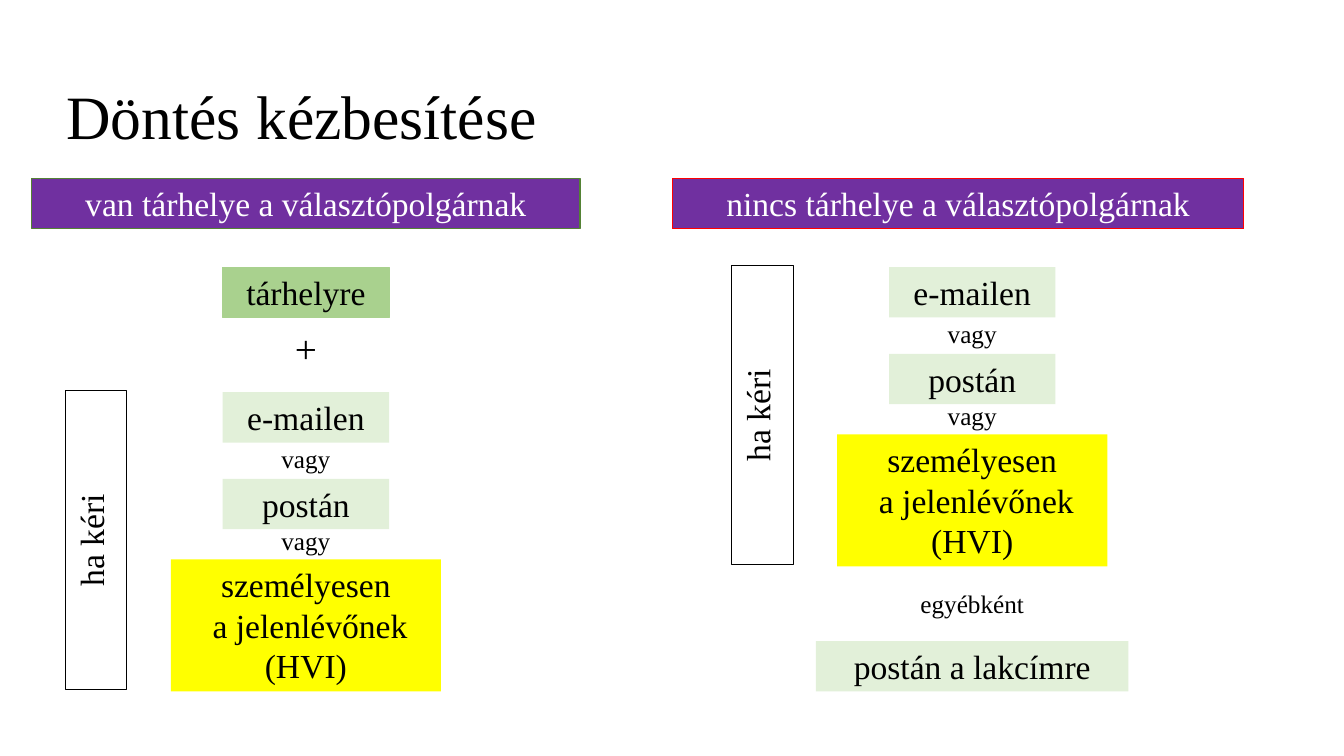
from dataclasses import dataclass

from pptx import Presentation
from pptx import util as u
from pptx.dml import color
from pptx.enum import shapes, text

COLOURS = {
    "black": "000000",
    "white": "FFFFFF",
    "purple": "7030A0",
    "dark green": "548235",
    "green": "A9D18E",
    "pale green": "E2F0D9",
    "yellow": "FFFF00",
    "red": "FF0000",
}
FONT = "Times New Roman"
WIDTH, HEIGHT = u.Inches(13.333), u.Inches(7.5)
LEFT_CENTRE, RIGHT_CENTRE = 22.76, 72.34
FIRST_ROW, LATER_ROW = 35.33, 51.87
CHOICE_WIDTH, LINE_HEIGHT = 12.38, 6.67


@dataclass(frozen=True)
class Label:
    """Centre, top, width and height are percentages of the slide."""

    words: str
    centre: float
    top: float
    width: float
    height: float = LINE_HEIGHT
    fill: str | None = None
    line: str | None = None
    ink: str = "black"
    size: int = 24
    upright: bool = False


def across(share: float) -> int:
    return round(WIDTH * share / 100)


def down(share: float) -> int:
    return round(HEIGHT * share / 100)


def rgb(name: str) -> color.RGBColor:
    return color.RGBColor.from_string(COLOURS[name])


def style_text(frame, size: int, ink: str) -> None:
    for para in frame.paragraphs:
        for span in para.runs:
            span.font.name = FONT
            span.font.size = u.Pt(size)
            span.font.color.rgb = rgb(ink)


def draw_label(page, label: Label) -> None:
    area = (across(label.centre - label.width / 2), down(label.top),
            across(label.width), down(label.height))
    if label.fill or label.line:
        box = page.shapes.add_shape(shapes.MSO_SHAPE.RECTANGLE, *area)
        box.shadow.inherit = False
        if label.fill:
            box.fill.solid()
            box.fill.fore_color.rgb = rgb(label.fill)
        else:
            box.fill.background()
        if label.line:
            box.line.color.rgb = rgb(label.line)
            box.line.width = u.Pt(0.75)
        else:
            box.line.fill.background()
    else:
        box = page.shapes.add_textbox(*area)
    frame = box.text_frame
    frame.word_wrap = True
    frame.vertical_anchor = text.MSO_ANCHOR.TOP
    if label.upright:
        box.element.txBody.bodyPr.set("vert", "vert270")
    frame.text = label.words
    for para in frame.paragraphs:
        para.alignment = text.PP_ALIGN.CENTER
    style_text(frame, label.size, label.ink)


def request_choices(centre: float, top: float) -> list[Label]:
    return [
        Label("ha kéri", centre - 15.6, top - 0.2, 4.58, 39.6,
              line="black", upright=True),
        Label("e-mailen", centre, top, CHOICE_WIDTH, fill="pale green"),
        Label("vagy", centre, top + 6.13, 7.05, 5.33, size=18),
        Label("postán", centre, top + 11.47, CHOICE_WIDTH, fill="pale green"),
        Label("vagy", centre, top + 16.93, 7.05, 5.33, size=18),
        Label("személyesen\v a jelenlévőnek\v(HVI)", centre, top + 22.13,
              20.1, 17.47, fill="yellow"),
    ]


def draw_title(page, words: str) -> None:
    title = page.shapes.title
    title.left, title.top = across(4.2), down(6.13)
    title.width, title.height = across(83.4), down(19.33)
    frame = title.text_frame
    frame.word_wrap = True
    frame.vertical_anchor = text.MSO_ANCHOR.MIDDLE
    frame.text = words
    para = frame.paragraphs[0]
    para.alignment = text.PP_ALIGN.LEFT
    para.line_spacing = 0.9
    style_text(frame, 44, "black")


def main() -> None:
    deck = Presentation()
    deck.slide_width, deck.slide_height = WIDTH, HEIGHT
    page = deck.slides.add_slide(deck.slide_layouts.get_by_name("Title Only"))
    draw_title(page, "Döntés kézbesítése")
    labels = [
        Label("van tárhelye a választópolgárnak", LEFT_CENTRE, 23.6, 40.8,
              fill="purple", line="dark green", ink="white"),
        Label("tárhelyre", LEFT_CENTRE, FIRST_ROW, CHOICE_WIDTH,
              fill="green", line="green"),
        Label("+", LEFT_CENTRE, 42.27, CHOICE_WIDTH, 7.6, size=28),
        *request_choices(LEFT_CENTRE, LATER_ROW),
        Label("nincs tárhelye a választópolgárnak", 71.29, 23.6, 42.53,
              fill="purple", line="red", ink="white"),
        *request_choices(RIGHT_CENTRE, FIRST_ROW),
        Label("egyébként", RIGHT_CENTRE, 77.2, 9.68, 5.33, size=18),
        Label("postán a lakcímre", RIGHT_CENTRE, 84.8, 23.25,
              fill="pale green"),
    ]
    for label in labels:
        draw_label(page, label)
    deck.save("out.pptx")


if __name__ == "__main__":
    main()
